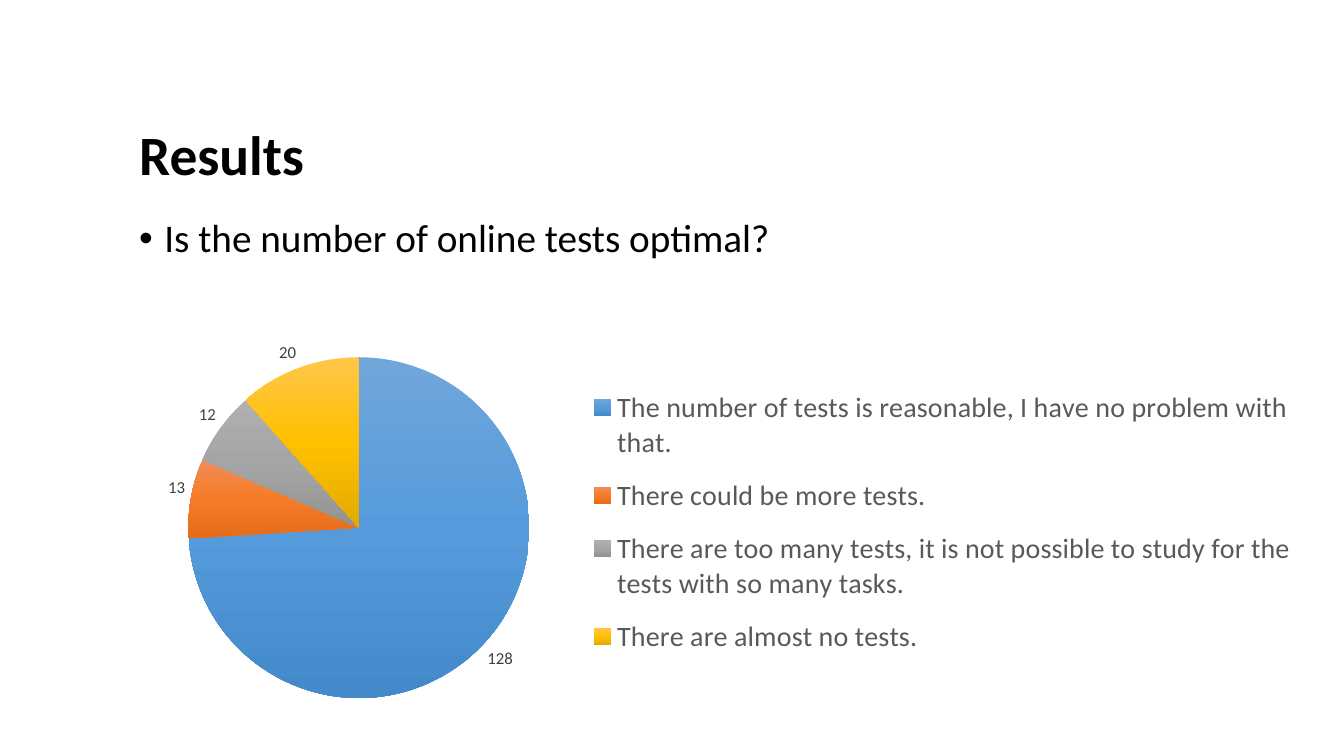
from copy import deepcopy

from pptx import Presentation
from pptx.chart.data import CategoryChartData
from pptx.dml.color import RGBColor
from pptx.enum.chart import XL_CHART_TYPE as CT, XL_LABEL_POSITION as LP, XL_LEGEND_POSITION as LEG
from pptx.enum.text import MSO_ANCHOR, PP_ALIGN
from pptx.oxml import parse_xml
from pptx.oxml.ns import nsdecls
from pptx.util import Inches, Pt

BLACK = RGBColor(0x00, 0x00, 0x00)
LABEL_GREY = RGBColor(0x40, 0x40, 0x40)
LEGEND_GREY = RGBColor(0x59, 0x59, 0x59)
BLUES = [RGBColor(0x71, 0xA6, 0xDB), RGBColor(0x55, 0x9B, 0xDB), RGBColor(0x44, 0x8A, 0xCA)]
ORANGES = [RGBColor(0xF1, 0x8C, 0x57), RGBColor(0xF6, 0x7B, 0x28), RGBColor(0xE5, 0x6C, 0x19)]
GREYS = [RGBColor(0xAF, 0xAF, 0xAF), RGBColor(0xA5, 0xA5, 0xA5), RGBColor(0x93, 0x93, 0x93)]
YELLOWS = [RGBColor(0xFF, 0xC6, 0x4B), RGBColor(0xFF, 0xC0, 0x00), RGBColor(0xE3, 0xAB, 0x00)]

ANSWERS = [
    ("The number of tests is reasonable, I have no problem with that.", 128, BLUES),
    ("There could be more tests.", 13, ORANGES),
    ("There are too many tests, it is not possible to study for the tests with so many tasks.", 12, GREYS),
    ("There are almost no tests.", 20, YELLOWS),
]


def style(font, size, color, bold=False):
    font.name, font.size, font.bold = "Calibri", Pt(size), bold
    font.color.rgb = color


def set_layout(parent, index, x, y, w, h, target=""):
    for old in parent.xpath("c:layout"):
        parent.remove(old)
    parent.insert(index, parse_xml(
        f'<c:layout {nsdecls("c")}><c:manualLayout>{target}'
        '<c:xMode val="edge"/><c:yMode val="edge"/>'
        f'<c:x val="{x}"/><c:y val="{y}"/><c:w val="{w}"/><c:h val="{h}"/>'
        '</c:manualLayout></c:layout>'))


prs = Presentation()
prs.slide_width, prs.slide_height = Inches(13.33), Inches(7.5)
s = prs.slides.add_slide(prs.slide_layouts[1])

title = s.shapes.title
title.left, title.top, title.width, title.height = Inches(1.28), Inches(1.2), Inches(11.5), Inches(0.73)
title.text_frame.vertical_anchor = MSO_ANCHOR.MIDDLE
p = title.text_frame.paragraphs[0]
p.alignment = PP_ALIGN.LEFT
p.line_spacing = 0.9
r = p.add_run()
r.text = "Results"
style(r.font, 39.6, BLACK, True)

body = s.placeholders[1]
body.left, body.top, body.width, body.height = Inches(1.28), Inches(2.12), Inches(11.89), Inches(4.29)
p = body.text_frame.paragraphs[0]
pPr = p._p.get_or_add_pPr()
pPr.set("marL", str(Inches(0.25)))
pPr.set("indent", str(-Inches(0.25)))
pPr.append(parse_xml(f'<a:buFont {nsdecls("a")} typeface="Arial"/>'))
pPr.append(parse_xml(f'<a:buChar {nsdecls("a")} char="•"/>'))
p.line_spacing = 0.9
p.space_before = Pt(0)
r = p.add_run()
r.text = "Is the number of online tests optimal?"
style(r.font, 28, BLACK)

data = CategoryChartData()
data.categories = [answer for answer, count, shades in ANSWERS]
data.add_series("Series 1", [count for answer, count, shades in ANSWERS])
chart = s.shapes.add_chart(CT.PIE, Inches(1.28), Inches(2.89), Inches(11.78), Inches(4.45), data).chart
style(chart.font, 10, BLACK)
chart.has_title = False

chart.has_legend = True
legend = chart.legend
legend.position = LEG.RIGHT
legend.include_in_layout = False
style(legend.font, 20, LEGEND_GREY)
set_layout(legend._element, 1, 0.39, 0.18, 0.59, 0.67)
set_layout(chart._chartSpace.chart.plotArea, 0, 0.05, 0.147, 0.287, 0.76,
           '<c:layoutTarget val="inner"/>')

plot = chart.plots[0]
plot.vary_by_categories = True
plot.has_data_labels = True
labels = plot.data_labels
labels.show_value = True
labels.show_percentage = False
labels.position = LP.OUTSIDE_END
style(labels.font, 12, LABEL_GREY)

for i, (answer, count, shades) in enumerate(ANSWERS):
    fmt = plot.series[0].points[i].format
    fmt.line.fill.background()
    fill = fmt.fill
    fill.gradient()
    fill.gradient_angle = 270
    stops = chart._chartSpace.xpath(".//a:gsLst")[-1]
    stops.append(deepcopy(stops[-1]))
    for stop, shade, position in zip(fill.gradient_stops, shades, (0, 0.5, 1)):
        stop.color.rgb = shade
        stop.position = position

prs.save("out.pptx")
